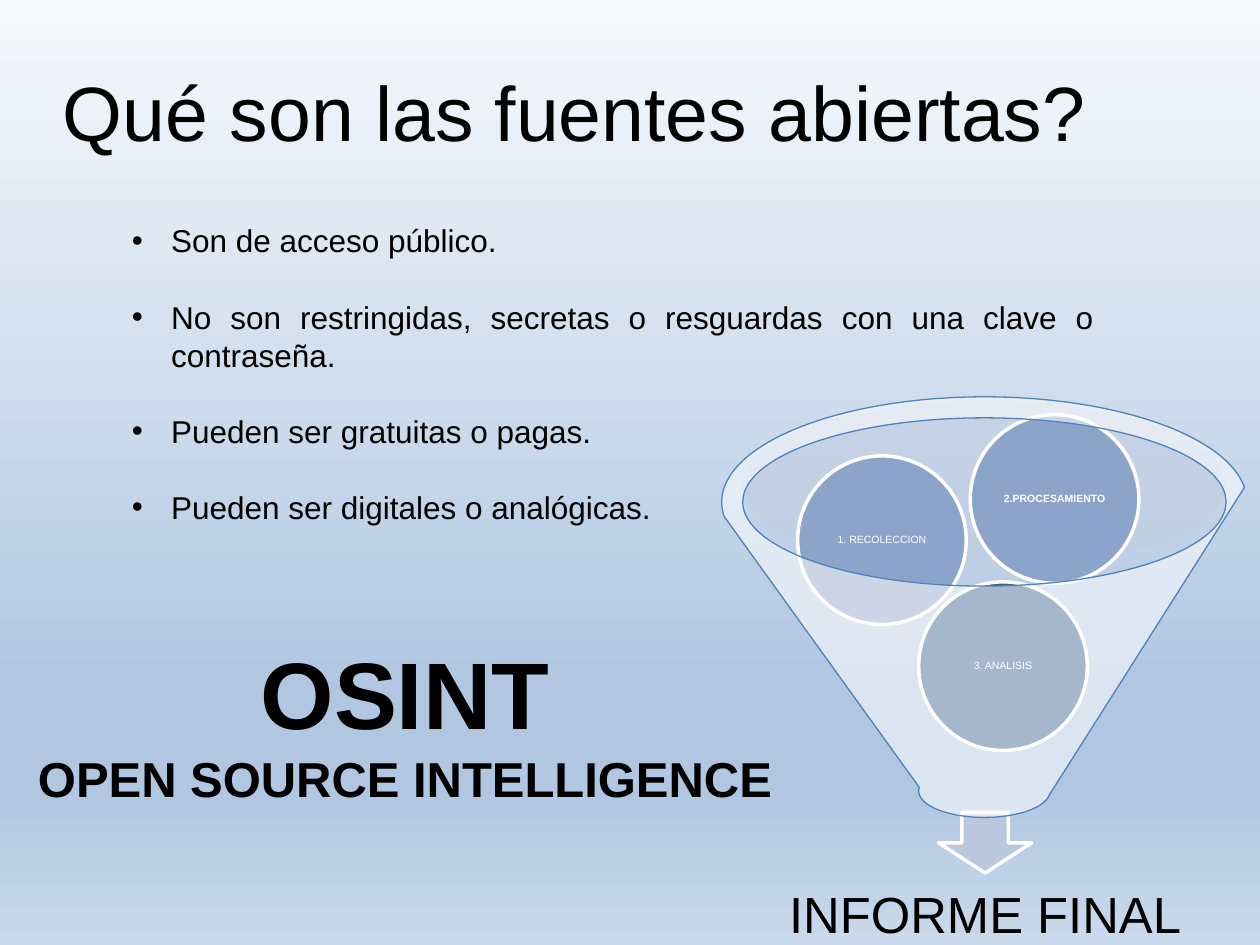
from copy import deepcopy

from lxml import etree
from pptx import Presentation
from pptx import util as u
from pptx.dml.color import RGBColor
from pptx.enum import shapes, text
from pptx.oxml import ns


def color(value):
    return RGBColor.from_string(value)


def write(paragraph, words, size, ink="000000", bold=False):
    run = paragraph.add_run()
    run.text = words
    run.font.name = "Arial"
    run.font.size = u.Pt(size)
    run.font.bold = bold
    run.font.color.rgb = color(ink)
    return run


prs = Presentation()
prs.slide_width, prs.slide_height = u.Cm(25.4), u.Cm(19.05)
slide = prs.slides.add_slide(prs.slide_layouts[6])

sky = slide.background.fill
sky.gradient()
sky.gradient_angle = 270
stop_list = sky.gradient_stops[0]._gs.getparent()
for stop in list(stop_list)[:2]:
    stop_list.append(deepcopy(stop))
tones = [(0, "F6F9FC"), (0.74, "B0C6E1"), (0.83, "B0C6E1"), (1, "CAD9EB")]
for stop, (position, tone) in zip(sky.gradient_stops, tones):
    stop.position = position
    stop.color.rgb = color(tone)

features = slide.shapes.add_textbox(u.Cm(2.41), u.Cm(4.34), u.Cm(19.89), u.Cm(6.4)).text_frame
features.word_wrap = True
sentences = [
    "Son de acceso público.",
    "No son restringidas, secretas o resguardas con una clave o contraseña.",
    "Pueden ser gratuitas o pagas.",
    "Pueden ser digitales o analógicas.",
]
for index, sentence in enumerate(sentences):
    feature = features.add_paragraph() if index else features.paragraphs[0]
    feature.alignment = text.PP_ALIGN.JUSTIFY
    feature.space_before = u.Pt(22 if index else 0)
    properties = feature._p.get_or_add_pPr()
    properties.set("marL", str(u.Cm(0.79)))
    properties.set("indent", str(u.Cm(-0.79)))
    etree.SubElement(properties, ns.qn("a:buFont")).set("typeface", "Arial")
    etree.SubElement(properties, ns.qn("a:buChar")).set("char", "•")
    write(feature, sentence, 18)

title = slide.shapes.add_textbox(u.Cm(1.27), u.Cm(1.5), u.Cm(22.86), u.Cm(1.7)).text_frame
title.word_wrap = True
title.margin_left = title.margin_right = title.margin_top = title.margin_bottom = 0
title.vertical_anchor = text.MSO_ANCHOR.MIDDLE
title.paragraphs[0].line_spacing = 0.9
write(title.paragraphs[0], "Qué son las fuentes abiertas?", 44)

kinds = shapes.MSO_SHAPE
funnel_parts = [
    (kinds.OVAL, 14.96, 8.08, 9.75, 3.38, "C2CDE1", 55, None, 0, None),
    (kinds.DOWN_ARROW, 18.92, 16.38, 1.88, 1.22, "BBC7DE", 100, "FFFFFF", 2, None),
    (kinds.OVAL, 18.52, 11.73, 3.4, 3.4, "3A5F8C", 100, "FFFFFF", 2, "3. ANALISIS"),
    (kinds.OVAL, 16.08, 9.19, 3.4, 3.4, "8CA4C9", 100, "FFFFFF", 2, "1. RECOLECCION"),
    (kinds.OVAL, 19.56, 8.36, 3.4, 3.4, "8CA4C9", 100, "FFFFFF", 2, "2.PROCESAMIENTO"),
    (kinds.FUNNEL, 14.55, 8, 10.59, 8.48, "FFFFFF", 55, "4F81BD", 0.75, None),
]
for kind, left, top, width, height, fill, opacity, edge, weight, stage in funnel_parts:
    part = slide.shapes.add_shape(kind, u.Cm(left), u.Cm(top), u.Cm(width), u.Cm(height))
    part.shadow.inherit = False
    part.fill.solid()
    part.fill.fore_color.rgb = color(fill)
    if opacity < 100:
        tint = part.fill._xPr.find(ns.qn("a:solidFill"))[0]
        etree.SubElement(tint, ns.qn("a:alpha")).set("val", str(opacity * 1000))
    if edge:
        part.line.color.rgb = color(edge)
        part.line.width = u.Pt(weight)
    else:
        part.line.fill.background()
    if stage:
        label = part.text_frame
        label.word_wrap = True
        label.margin_left = label.margin_right = u.Cm(0.02)
        label.margin_top = label.margin_bottom = u.Cm(0.02)
        label.vertical_anchor = text.MSO_ANCHOR.MIDDLE
        label.paragraphs[0].alignment = text.PP_ALIGN.CENTER
        label.paragraphs[0].line_spacing = 0.9
        write(label.paragraphs[0], stage, 6, "FFFFFF", stage == "2.PROCESAMIENTO")

report = slide.shapes.add_textbox(u.Cm(15.32), u.Cm(17.35), u.Cm(9.09), u.Cm(2.26)).text_frame
report.word_wrap = True
report.margin_left = report.margin_right = u.Cm(0.58)
report.margin_top = report.margin_bottom = u.Cm(0.58)
report.vertical_anchor = text.MSO_ANCHOR.MIDDLE
report.paragraphs[0].alignment = text.PP_ALIGN.CENTER
report.paragraphs[0].line_spacing = 0.9
write(report.paragraphs[0], "INFORME FINAL", 29)

osint = slide.shapes.add_textbox(u.Cm(0.43), u.Cm(12.67), u.Cm(15.47), u.Cm(3.76)).text_frame
osint.word_wrap = False
for index, (words, size) in enumerate([("OSINT", 54), ("OPEN SOURCE INTELLIGENCE", 28)]):
    line = osint.add_paragraph() if index else osint.paragraphs[0]
    line.alignment = text.PP_ALIGN.CENTER
    run = write(line, words, size, bold=True)
    outline = etree.Element(ns.qn("a:ln"), w=str(u.Pt(0.75)))
    outline_fill = etree.SubElement(outline, ns.qn("a:solidFill"))
    etree.SubElement(outline_fill, ns.qn("a:srgbClr")).set("val", "FFFFFF")
    run._r.get_or_add_rPr().insert(0, outline)

prs.save("out.pptx")
